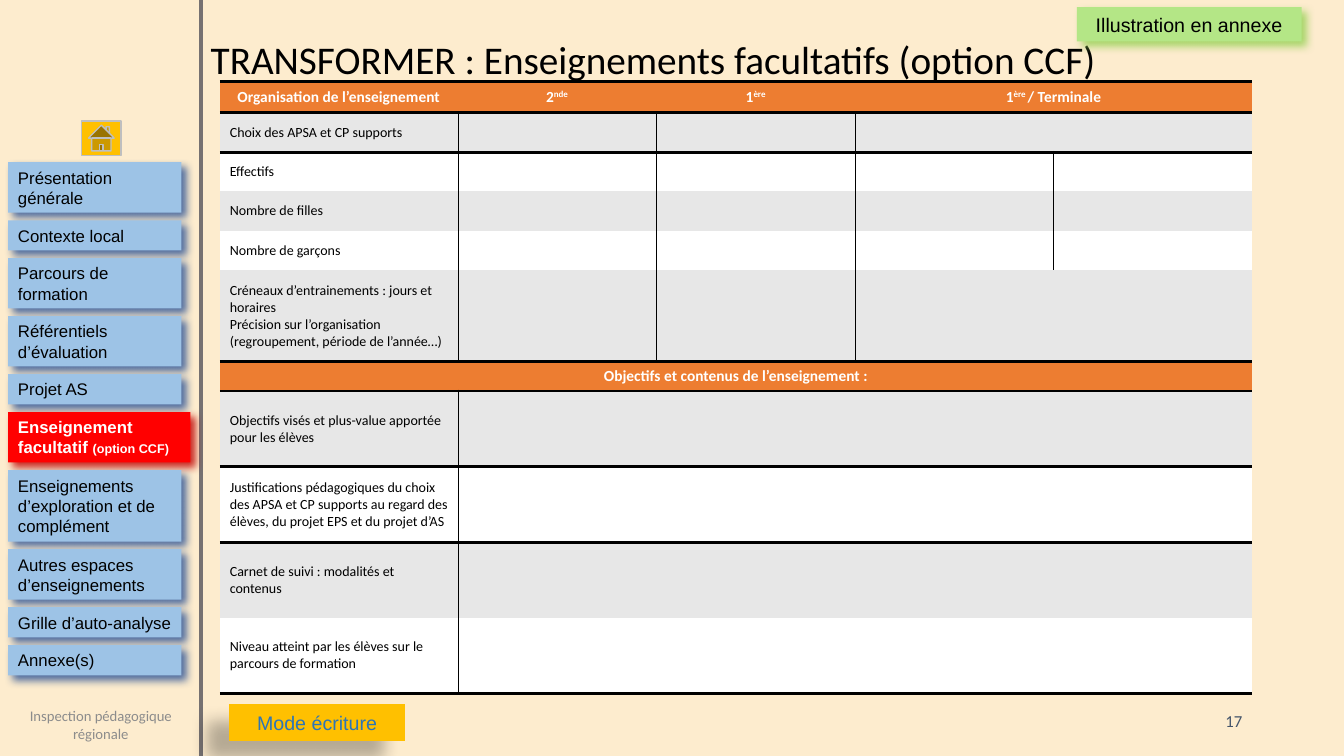
from lxml import etree
from pptx import Presentation
from pptx.dml.color import RGBColor
from pptx.enum.shapes import MSO_CONNECTOR, MSO_SHAPE
from pptx.enum.text import MSO_ANCHOR, MSO_AUTO_SIZE, PP_ALIGN
from pptx.oxml.ns import qn
from pptx.util import Emu, Pt

RECTANGLE = MSO_SHAPE.RECTANGLE
HOME_BUTTON = MSO_SHAPE.ACTION_BUTTON_HOME
BLANK_BUTTON = MSO_SHAPE.ACTION_BUTTON_CUSTOM
STRAIGHT = MSO_CONNECTOR.STRAIGHT
TOP, MIDDLE = MSO_ANCHOR.TOP, MSO_ANCHOR.MIDDLE
LEFT, CENTER, RIGHT = PP_ALIGN.LEFT, PP_ALIGN.CENTER, PP_ALIGN.RIGHT
NO_AUTO_SIZE = MSO_AUTO_SIZE.NONE

CREAM = RGBColor(0xFD, 0xEC, 0xCE)
BLACK = RGBColor(0, 0, 0)
WHITE = RGBColor(0xFF, 0xFF, 0xFF)
DARK_GREY = RGBColor(0x76, 0x71, 0x71)
FOOTER_GREY = RGBColor(0x8C, 0x8C, 0x8C)
SILVER = RGBColor(0xBF, 0xBF, 0xBF)
BAND_GREY = RGBColor(0xE7, 0xE7, 0xE7)
SLATE = RGBColor(0x44, 0x54, 0x6A)
MENU_BLUE = RGBColor(0x9D, 0xC3, 0xE6)
SHADOW_BLUE = RGBColor(0x2F, 0x55, 0x97)
LINK_BLUE = RGBColor(0x2E, 0x75, 0xB6)
RED = RGBColor(0xFF, 0, 0)
SHADOW_RED = RGBColor(0xC0, 0, 0)
GOLD = RGBColor(0xFF, 0xC0, 0)
LIGHT_GREEN = RGBColor(0xB4, 0xE6, 0x86)
SHADOW_GREEN = RGBColor(0x92, 0xD0, 0x50)
ORANGE = RGBColor(0xED, 0x7D, 0x31)

EMU_PER_PX = 9144
PLAIN_TABLE_STYLE = "{2D5ABB26-0587-4C30-8999-92F81FD0307C}"
THIN, THICK = 0.25, 2.25

MENU = [
    ("Présentation générale", 2),
    ("Contexte local", 1),
    ("Parcours de formation", 2),
    ("Référentiels d’évaluation", 2),
    ("Projet AS", 1),
    ("Enseignement facultatif ", 2),
    ("Enseignements d’exploration et de complément", 3),
    ("Autres espaces d’enseignements", 2),
    ("Grille d’auto-analyse", 1),
    ("Annexe(s)", 1),
]
ACTIVE_ITEM = 5
ITEM_HEIGHTS = {1: 30, 2: 50, 3: 71}

HEADINGS = [
    [("Organisation de l’enseignement", False)],
    [("2", False), ("nde", True)],
    [("1", False), ("ère", True)],
    [("1", False), ("ère ", True), ("/ Terminale", False)],
]
ROW_LABELS = {
    1: ["Choix des APSA et CP supports"],
    2: ["Effectifs"],
    3: ["Nombre de filles"],
    4: ["Nombre de garçons"],
    5: ["Créneaux d’entrainements : jours et horaires",
        "Précision sur l’organisation (regroupement, période de l’année…)"],
    7: ["Objectifs visés et plus-value apportée pour les élèves"],
    8: ["Justifications pédagogiques du choix des APSA et CP supports au regard "
        "des élèves, du projet EPS et du projet d’AS"],
    9: ["Carnet de suivi : modalités et contenus"],
    10: ["Niveau atteint par les élèves sur le parcours de formation"],
}
COLUMN_WIDTHS = [236] + [197] * 4
ROW_HEIGHTS = [31] + [39] * 4 + [91, 29] + [75] * 4
SECTION_ROW = 6
GREY_ROWS = (1, 3, 5, 7, 9)
MERGES = [(0, 3), (1, 3), (5, 3), (6, 0), (7, 1), (8, 1), (9, 1), (10, 1)]
RULES_BELOW = {0: THICK, 5: THICK, 6: THICK, 7: THICK, 10: 2}
DIVIDED_ROWS = {1: (1, 2, 3, 4, 5, 7, 8, 9, 10), 2: (1, 2, 3, 4, 5),
                3: (1, 2, 3, 4, 5), 4: (2, 3, 4)}


def px(*lengths):
    """Turn pixel lengths into a list of EMU lengths."""
    return [Emu(round(length * EMU_PER_PX)) for length in lengths]


def style_paragraph(paragraph, size, color, font="Arial", align=LEFT, bold=False):
    """Give a paragraph its alignment and font."""
    paragraph.alignment = align
    paragraph.font.name = font
    paragraph.font.size = Pt(size)
    paragraph.font.bold = bold
    paragraph.font.color.rgb = color


def write_text(shape, text, size, color, anchor=MIDDLE, **style):
    """Put one styled paragraph in a shape and return it."""
    frame = shape.text_frame
    frame.word_wrap = True
    frame.auto_size = NO_AUTO_SIZE
    frame.vertical_anchor = anchor
    frame.text = text
    style_paragraph(frame.paragraphs[0], size, color, **style)
    return frame.paragraphs[0]


def add_shadow(shape, color, opacity, blur, distance, angle):
    """Add an outer shadow, with lengths in points and the angle in degrees."""
    effects = shape._element.spPr.find(qn("a:effectLst"))
    shadow = etree.SubElement(effects, qn("a:outerShdw"), blurRad=str(Pt(blur)),
                              dist=str(Pt(distance)), dir=str(angle * 60000),
                              algn="tl", rotWithShape="0")
    tint = etree.SubElement(shadow, qn("a:srgbClr"), val=str(color))
    etree.SubElement(tint, qn("a:alpha"), val=str(opacity * 1000))


def add_block(slide, kind, box, fill):
    """Add a filled shape without outline or shadow."""
    shape = slide.shapes.add_shape(kind, *px(*box))
    shape.shadow.inherit = False
    shape.fill.solid()
    shape.fill.fore_color.rgb = fill
    shape.line.fill.background()
    return shape


def add_title(slide, box):
    """Fill the title placeholder."""
    title = slide.shapes.title
    title.left, title.top, title.width, title.height = px(*box)
    write_text(title, "TRANSFORMER : Enseignements facultatifs (option CCF)", 28,
               BLACK, anchor=TOP, font="Calibri")


def add_sidebar(slide, left, top, width, height):
    """Draw the divider, home button, menu and footer of the side column."""
    divider = slide.shapes.add_connector(
        STRAIGHT, *px(left + width, top, left + width, top + height))
    divider.line.color.rgb = DARK_GREY
    divider.line.width = Pt(3)
    etree.SubElement(divider._element.spPr, qn("a:effectLst"))
    home = add_block(slide, HOME_BUTTON, (left + 81, top + 120, 39, 34), GOLD)
    home.line.color.rgb = SILVER
    home.line.width = Pt(1)
    add_menu(slide, left + 8, top + 161, 172, 509)
    footer = slide.shapes.add_textbox(*px(left + 14, top + 702, 172, 34))
    write_text(footer, "Inspection pédagogique régionale", 10.5, FOOTER_GREY,
               font="Calibri", align=CENTER)


def add_menu(slide, left, top, width, height):
    """Stack the menu items with equal gaps and highlight the active one."""
    heights = [ITEM_HEIGHTS[lines] for _, lines in MENU]
    gap = (height - sum(heights)) / (len(MENU) - 1)
    for index, (label, _) in enumerate(MENU):
        active = index == ACTIVE_ITEM
        item = add_block(slide, RECTANGLE,
                         (left, top, width + 9 * active, heights[index]),
                         RED if active else MENU_BLUE)
        add_shadow(item, SHADOW_RED if active else SHADOW_BLUE, 84, 6, 5, 45)
        paragraph = write_text(item, label, 12, WHITE if active else BLACK, bold=active)
        if active:
            option = paragraph.add_run()
            option.text = "(option CCF)"
            option.font.size = Pt(9)
        top += heights[index] + gap


def add_button(slide, box, kind, text, colors, shadow):
    """Draw a shadowed button with a centred label."""
    fill, text_color = colors
    button = add_block(slide, kind, box, fill)
    add_shadow(button, *shadow)
    write_text(button, text, 14, text_color, align=CENTER)


def set_borders(cell, row, column):
    """Add the borders that fall on the edges of a cell."""
    widths = {
        "a:lnL": THIN if row in DIVIDED_ROWS.get(column, ()) else 0,
        "a:lnR": THIN if row in DIVIDED_ROWS.get(column + 1, ()) else 0,
        "a:lnT": RULES_BELOW.get(row - 1, 0) if row else THICK,
        "a:lnB": RULES_BELOW.get(row, 0),
    }
    properties = cell._tc.get_or_add_tcPr()
    drawn = [(tag, width) for tag, width in widths.items() if width]
    for position, (tag, width) in enumerate(drawn):
        line = etree.Element(qn(tag), w=str(Pt(width)))
        fill = etree.SubElement(line, qn("a:solidFill"))
        etree.SubElement(fill, qn("a:srgbClr"), val=str(BLACK))
        properties.insert(position, line)


def add_teaching_table(slide, left, top):
    """Build the table of teaching organisation and objectives."""
    frame = slide.shapes.add_table(len(ROW_HEIGHTS), len(COLUMN_WIDTHS), *px(
        left, top, sum(COLUMN_WIDTHS), sum(ROW_HEIGHTS)))
    table = frame.table
    table._tbl.tblPr.find(qn("a:tableStyleId")).text = PLAIN_TABLE_STYLE
    for column, width in zip(table.columns, px(*COLUMN_WIDTHS)):
        column.width = width
    for row, height in zip(table.rows, px(*ROW_HEIGHTS)):
        row.height = height
    for column, runs in enumerate(HEADINGS):
        paragraph = table.cell(0, column).text_frame.paragraphs[0]
        for text, raised in runs:
            run = paragraph.add_run()
            run.text = text
            if raised:
                run._r.get_or_add_rPr().set("baseline", "30000")
    for row, lines in ROW_LABELS.items():
        table.cell(row, 0).text = "\n".join(lines)
    table.cell(SECTION_ROW, 0).text = "Objectifs et contenus de l’enseignement :"
    for row in range(len(ROW_HEIGHTS)):
        heading = row in (0, SECTION_ROW)
        for column in range(len(COLUMN_WIDTHS)):
            cell = table.cell(row, column)
            cell.vertical_anchor = MIDDLE
            cell.fill.solid()
            cell.fill.fore_color.rgb = (
                ORANGE if heading else BAND_GREY if row in GREY_ROWS else WHITE)
            set_borders(cell, row, column)
            for paragraph in cell.text_frame.paragraphs:
                style_paragraph(paragraph, 11 if heading else 10,
                                WHITE if heading else BLACK, font="Calibri",
                                align=CENTER if heading else LEFT, bold=heading)
    for row, column in MERGES:
        table.cell(row, column).merge(table.cell(row, len(COLUMN_WIDTHS) - 1))


def main():
    """Build and save the slide."""
    presentation = Presentation()
    presentation.slide_width, presentation.slide_height = px(1333, 750)
    slide = presentation.slides.add_slide(presentation.slide_layouts[5])
    slide.background.fill.solid()
    slide.background.fill.fore_color.rgb = CREAM
    add_title(slide, (199, 30, 1092, 57))
    add_sidebar(slide, 0, 0, 199, 750)
    add_button(slide, (227, 698, 175, 37), BLANK_BUTTON, "Mode écriture",
               (GOLD, LINK_BLUE), (BLACK, 28, 11.8, 19.7, 141))
    add_button(slide, (1068, 7, 223, 34), RECTANGLE, "Illustration en annexe",
               (LIGHT_GREEN, BLACK), (SHADOW_GREEN, 80, 6, 5, 45))
    number = slide.shapes.add_textbox(*px(1194, 695, 48, 40))
    write_text(number, "17", 12, SLATE, font="Calibri", align=RIGHT)
    add_teaching_table(slide, 218, 81)
    presentation.save("out.pptx")


if __name__ == "__main__":
    main()
